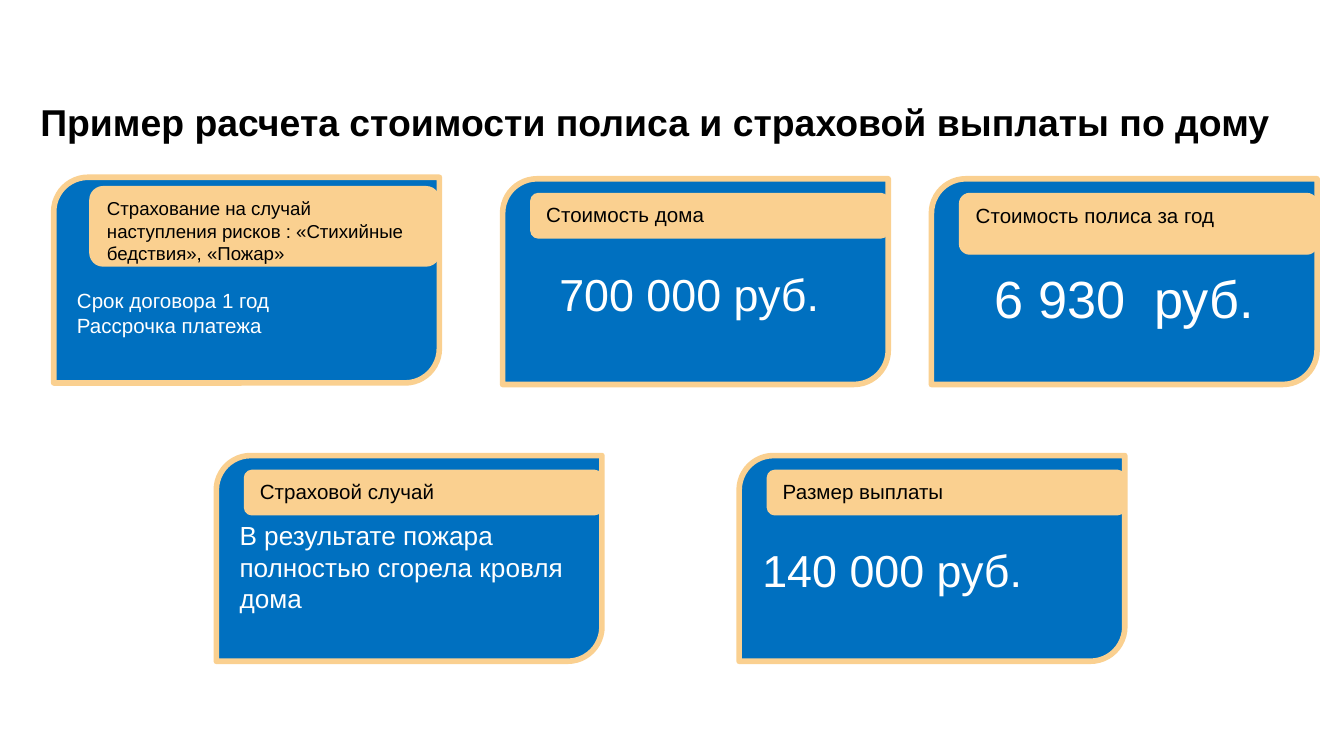
from pptx import Presentation
from pptx.dml.color import RGBColor
from pptx.enum.shapes import MSO_SHAPE
from pptx.enum.text import MSO_ANCHOR, PP_ALIGN
from pptx.util import Pt

CARD_SHAPE = MSO_SHAPE.ROUND_2_DIAG_RECTANGLE
TAG_SHAPE = MSO_SHAPE.ROUNDED_RECTANGLE
TOP = MSO_ANCHOR.TOP
LEFT, CENTER = PP_ALIGN.LEFT, PP_ALIGN.CENTER

COLORS = {"card": "0070C0", "accent": "FAD090", "dark": "000000", "light": "FFFFFF"}
FONT = "Arial"
CARD_W, CARD_H = 206.6, 110.2
UPPER_Y, LOWER_Y = 95.8, 244.1
LINE_H = 12.65
TAG_INSET = (15.1, 7.9)

CARDS = [
    {"at": (28.8, 95), "tag": "Страхование на случай наступления рисков : «Стихийные бедствия», «Пожар»",
     "tag_inset": (19.4, 5), "tag_h": 42.5, "tag_size": 10,
     "lines": ["Срок договора 1 год", "Рассрочка платежа"], "size": 11, "skip": 4},
    {"at": (269.3, UPPER_Y), "tag": "Стоимость дома",
     "lines": ["700 000 руб. "], "size": 24, "align": CENTER},
    {"at": (499, UPPER_Y), "tag": "Стоимость полиса за год", "tag_h": 32.4,
     "lines": ["6 930  руб."], "size": 28, "align": CENTER},
    {"at": (115.9, LOWER_Y), "tag": "Страховой случай",
     "lines": ["В результате пожара полностью сгорела кровля дома"], "size": 14, "skip": 2},
    {"at": (396, LOWER_Y), "tag": "Размер выплаты",
     "lines": ["140 000 руб."], "size": 24},
]


def rgb(name):
    """Return the named palette colour."""
    return RGBColor.from_string(COLORS[name])


def write(frame, lines, size, color, align=LEFT, bold=False):
    """Write one paragraph per line, from the top of the frame."""
    frame.word_wrap = True
    frame.vertical_anchor = TOP
    for index, line in enumerate(lines):
        paragraph = frame.add_paragraph() if index else frame.paragraphs[0]
        paragraph.alignment = align
        run = paragraph.add_run()
        run.text = line
        run.font.name = FONT
        run.font.size = Pt(size)
        run.font.bold = bold
        run.font.color.rgb = rgb(color)


def add_panel(slide, kind, box, fill, line_width):
    """Add a filled shape with an accent outline."""
    panel = slide.shapes.add_shape(kind, *map(Pt, box))
    panel.shadow.inherit = False
    panel.fill.solid()
    panel.fill.fore_color.rgb = rgb(fill)
    panel.line.color.rgb = rgb("accent")
    panel.line.width = Pt(line_width)
    return panel


def add_title(slide, box):
    """Add the slide heading."""
    frame = slide.shapes.add_textbox(*map(Pt, box)).text_frame
    frame.margin_left = frame.margin_right = Pt(7.9)
    frame.margin_top = frame.margin_bottom = Pt(4.3)
    write(frame, ["Пример расчета стоимости полиса и страховой выплаты по дому"],
          20, "dark", bold=True)
    frame.paragraphs[0].line_spacing = Pt(32)


def add_card(slide, box, card):
    """Add a card whose tag ends at the card's right edge."""
    x, y, width, _ = box
    body = add_panel(slide, CARD_SHAPE, box, "card", 3).text_frame
    body.margin_top = Pt(3.6 + LINE_H * card.get("skip", 3))
    write(body, card["lines"], card["size"], "light", card.get("align", LEFT))

    dx, dy = card.get("tag_inset", TAG_INSET)
    tag_box = (x + dx, y + dy, width - dx, card.get("tag_h", 23.8))
    tag = add_panel(slide, TAG_SHAPE, tag_box, "accent", 0.75).text_frame
    write(tag, [card["tag"]], card.get("tag_size", 11), "dark")


def main():
    """Build and save the slide."""
    deck = Presentation()
    deck.slide_width, deck.slide_height = Pt(720), Pt(405)
    slide = deck.slides.add_slide(deck.slide_layouts[6])
    add_title(slide, (13.7, 41, 686.2, 47.5))
    for card in CARDS:
        add_card(slide, (*card["at"], CARD_W, CARD_H), card)
    deck.save("out.pptx")


if __name__ == "__main__":
    main()
